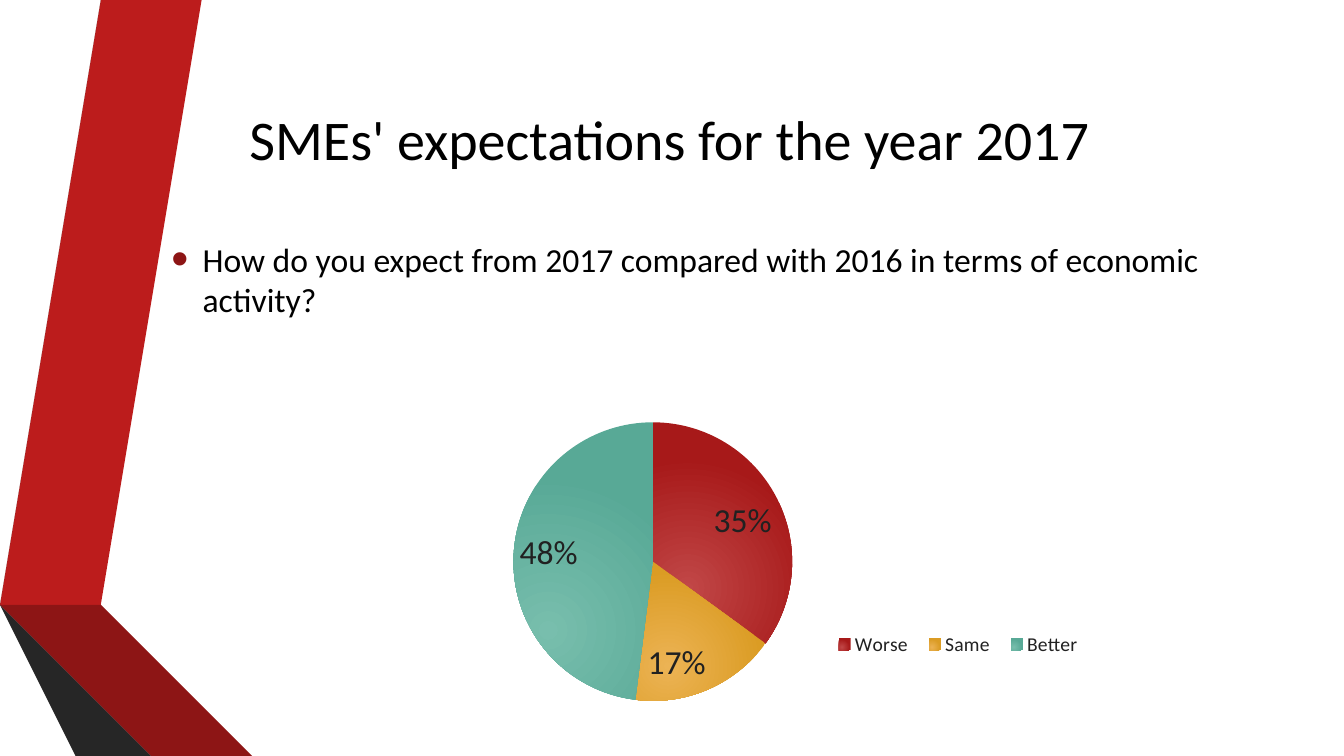
from lxml import etree
from pptx import Presentation
from pptx.chart.data import CategoryChartData
from pptx.dml.color import RGBColor
from pptx.enum.chart import XL_CHART_TYPE, XL_LABEL_POSITION, XL_LEGEND_POSITION
from pptx.enum.text import MSO_ANCHOR, PP_ALIGN
from pptx.oxml import parse_xml
from pptx.oxml.ns import nsdecls, qn
from pptx.util import Inches, Pt

FONT = "Calibri"
COLORS = {
    "text": "000000", "label": "212121", "bullet": "8D1515",
    "red": "BC1C1C", "gray": "595959", "dark gray": "404040",
    "gray edge": "262626", "dark red": "8D1515", "red edge": "5E0E0E",
}
BANDS = [
    ("red", [(0.5, 5.78), (0.77, 5.83), (1.73, 0), (1.45, 0)]),
    ("gray", [(1.39, 0), (1.11, 0), (0.16, 5.73), (0.44, 5.77)]),
    ("gray edge", [(0.16, 5.73), (1.45, 7.5), (1.51, 7.5)]),
    ("red edge", [(0.5, 5.79), (2.08, 7.5), (2.14, 7.5)]),
    ("dark red", [(0.5, 5.79), (2.14, 7.5), (2.83, 7.5), (0.77, 5.83), (0.5, 5.78)]),
    ("dark gray", [(2.02, 7.5), (0.48, 5.83), (0.44, 5.77), (0.16, 5.73), (1.51, 7.5)]),
]
# name, value, inner colour, outer colour
SLICES = [
    ("Worse", 35, "C14747", "A71919"),
    ("Same", 17, "ECB354", "DB9C24"),
    ("Better", 48, "78BEAD", "58A996"),
]


def rgb(name):
    return RGBColor.from_string(COLORS[name])


def set_font(font, size, color):
    font.name, font.size = FONT, Pt(size)
    font.color.rgb = rgb(color)


def place(shape, box):
    shape.left, shape.top, shape.width, shape.height = map(Inches, box)


def add_bands(slide, left, top):
    """Draw the folded ribbons behind everything else."""
    tree = slide.shapes._spTree
    for i, (color, points) in enumerate(BANDS):
        pen = slide.shapes.build_freeform(*points[0], scale=Inches(1))
        pen.add_line_segments(points[1:], close=True)
        band = pen.convert_to_shape(Inches(left), Inches(top))
        band.shadow.inherit = False
        band.fill.solid()
        band.fill.fore_color.rgb = rgb(color)
        band.line.fill.background()
        tree.insert(2 + i, band._element)


def fill_text(shape, box, text, size):
    place(shape, box)
    frame = shape.text_frame
    frame.text = text
    frame.word_wrap = True
    frame.vertical_anchor = MSO_ANCHOR.MIDDLE
    para = frame.paragraphs[0]
    set_font(para.font, size, "text")
    return para


def add_title(slide, box):
    para = fill_text(slide.shapes.title, box, "SMEs' expectations for the year 2017", 40)
    para.alignment = PP_ALIGN.CENTER


def add_body(slide, box):
    para = fill_text(
        slide.placeholders[1], box,
        "How do you expect from 2017 compared with 2016 in terms of economic activity?", 24)
    para.space_after = Pt(6)
    props = para._p.get_or_add_pPr()
    props.set("marL", str(Inches(0.31)))
    props.set("indent", str(-Inches(0.31)))
    ns = nsdecls("a")
    for xml in (
        f'<a:buClr {ns}><a:srgbClr val="{COLORS["bullet"]}"/></a:buClr>',
        f'<a:buSzPct {ns} val="145000"/>',
        f'<a:buFont {ns} typeface="Arial"/>',
        f'<a:buChar {ns} char="•"/>',
    ):
        props.append(parse_xml(xml))


def set_layout(part, x, y, width, height, inner=False):
    """Fix a chart part at fractions of the chart's size."""
    for old in part.findall(qn("c:layout")):
        part.remove(old)
    layout = etree.Element(qn("c:layout"))
    manual = etree.SubElement(layout, qn("c:manualLayout"))
    rows = [("layoutTarget", "inner")] if inner else []
    rows += [("xMode", "edge"), ("yMode", "edge"),
             ("x", x), ("y", y), ("w", width), ("h", height)]
    for tag, value in rows:
        etree.SubElement(manual, qn(f"c:{tag}")).set("val", str(value))
    if inner:
        part.insert(0, layout)
    else:
        part.find(qn("c:legendPos")).addnext(layout)


def shade(point, inner, outer):
    fill = point.format.fill
    fill.gradient()
    for stop, color in zip(fill.gradient_stops, (inner, outer)):
        stop.color.rgb = RGBColor.from_string(color)
    point.format.line.fill.background()


def add_pie(slide, box):
    data = CategoryChartData()
    data.categories = [row[0] for row in SLICES]
    data.add_series("Series 1", [row[1] for row in SLICES])
    chart = slide.shapes.add_chart(
        XL_CHART_TYPE.PIE, *map(Inches, box), data).chart
    chart.has_title = False
    set_font(chart.font, 10, "text")

    plot = chart.plots[0]
    plot.vary_by_categories = True
    for i, (_, _, inner, outer) in enumerate(SLICES):
        shade(plot.series[0].points[i], inner, outer)
    for line in list(chart._chartSpace.iter(qn("a:lin"))):
        line.getparent().replace(line, parse_xml(
            f'<a:path {nsdecls("a")} path="circle">'
            '<a:fillToRect l="50000" t="100000" r="100000" b="50000"/></a:path>'))

    plot.has_data_labels = True
    labels = plot.data_labels
    labels.show_value = False
    labels.show_percentage = True
    labels.number_format, labels.number_format_is_linked = "0%", False
    labels.position = XL_LABEL_POSITION.INSIDE_END
    set_font(labels.font, 24, "label")

    chart.has_legend = True
    legend = chart.legend
    legend.position = XL_LEGEND_POSITION.BOTTOM
    legend.include_in_layout = False
    set_font(legend.font, 14, "label")
    set_layout(legend._element, 0.66, 0.63, 0.25, 0.11)
    set_layout(chart._chartSpace.chart.plotArea, 0.37, 0.04, 0.26, 0.81, True)


def main():
    deck = Presentation()
    deck.slide_width, deck.slide_height = Inches(13.33), Inches(7.5)
    slide = deck.slides.add_slide(deck.slide_layouts[1])
    add_bands(slide, 0, 0)
    add_title(slide, (1.16, 0.41, 10.96, 1.92))
    add_body(slide, (1.6, 2.33, 10.96, 0.88))
    add_pie(slide, (1.16, 4.05, 10.63, 3.42))
    deck.save("out.pptx")


if __name__ == "__main__":
    main()
